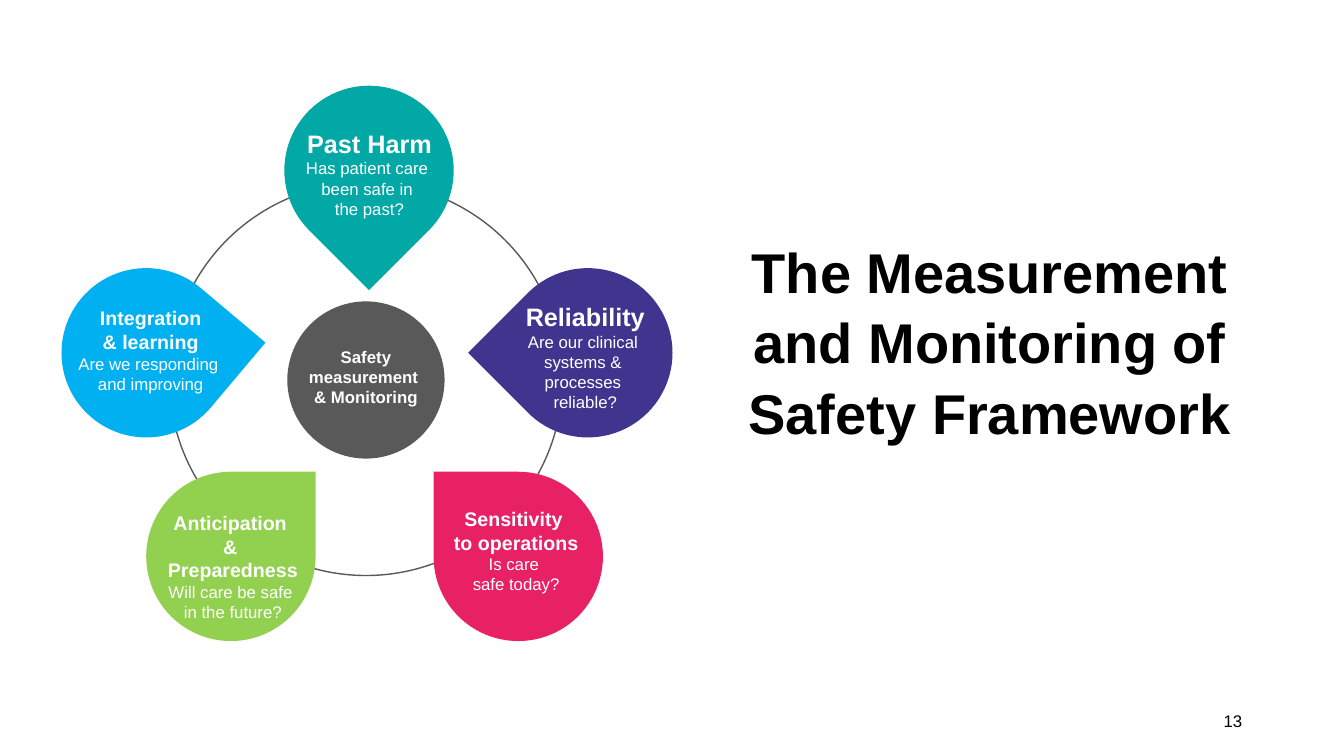
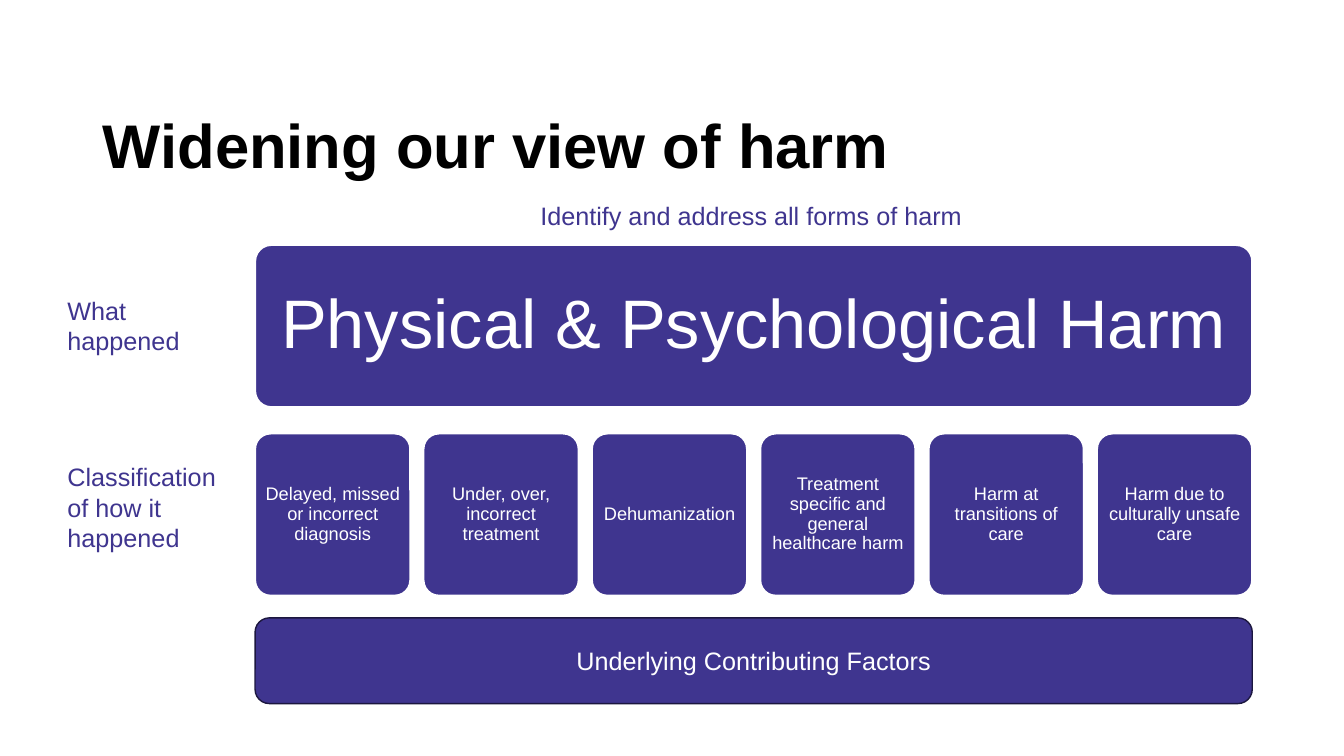
"""Build two slides on measuring safety and widening the view of harm."""
from pptx import Presentation
from pptx.dml.color import RGBColor as Rgb
from pptx.enum.shapes import MSO_SHAPE as Kind
from pptx.enum.text import MSO_ANCHOR as Anchor, MSO_AUTO_SIZE as Fit, PP_ALIGN as Align
from pptx.util import Pt

PX = 9144
BLACK = Rgb(0x00, 0x00, 0x00)
WHITE = Rgb(0xFF, 0xFF, 0xFF)
GRAY = Rgb(0x59, 0x59, 0x59)
TEAL = Rgb(0x02, 0xA8, 0xA5)
PURPLE = Rgb(0x3F, 0x35, 0x8F)
NAVY = Rgb(0x1C, 0x17, 0x3F)
PINK = Rgb(0xE8, 0x20, 0x64)
GREEN = Rgb(0x92, 0xD0, 0x50)
BLUE = Rgb(0x00, 0xB0, 0xF0)


def write(item, lines, color, align=Align.CENTER, space=None, inset=(10, 5), **form):
    """Fill a shape with (text, size, bold) lines."""
    frame = item.text_frame
    wide, high = inset
    form = {"word_wrap": True, "auto_size": Fit.NONE, "vertical_anchor": Anchor.TOP,
            "margin_left": wide * PX, "margin_right": wide * PX,
            "margin_top": high * PX, "margin_bottom": high * PX} | form
    for key, value in form.items():
        setattr(frame, key, value)
    for num, (text, size, bold) in enumerate(lines):
        para = frame.add_paragraph() if num else frame.paragraphs[0]
        para.alignment = align
        para.line_spacing = space
        run = para.add_run()
        run.text = text
        for key, value in {"name": "Arial", "size": Pt(size), "bold": bold}.items():
            setattr(run.font, key, value)
        run.font.color.rgb = color


def draw(slide, kind, box, fill=None, edge=None, width=1, adjust=None, turn=0):
    """Add a flat preset shape."""
    shape = slide.shapes.add_shape(kind, *[n * PX for n in box])
    shape.shadow.inherit = False
    shape.rotation = turn
    for part, color in ((shape.fill, fill), (shape.line.fill, edge)):
        if color is None:
            part.background()
        else:
            part.solid()
            part.fore_color.rgb = color
    if edge is not None:
        shape.line.width = Pt(width)
    if adjust is not None:
        shape.adjustments[0] = adjust
    return shape


deck = Presentation()
deck.slide_width, deck.slide_height = 1333 * PX, 750 * PX
heads = (
    ("The Measurement and Monitoring of Safety Framework", 40, (721, 227, 521, 212),
     {"space": 1.05}),
    ("Widening our view of harm", 44, (92, 40, 1150, 145),
     {"space": 0.9, "align": Align.LEFT, "vertical_anchor": Anchor.BOTTOM}),
)
slides = []
for text, size, box, form in heads:
    slide = deck.slides.add_slide(deck.slide_layouts[5])
    title = slide.shapes.title
    for key, value in zip(("left", "top", "width", "height"), box):
        setattr(title, key, value * PX)
    write(title, [(text, size, True)], BLACK, **form)
    slides.append(slide)
wheel, harm = slides

draw(wheel, Kind.OVAL, (168, 181, 390, 390), edge=GRAY)
petals = (
    ((282, 85), 135, TEAL, (293, 122, 147, 101), 18,
     ["Past Harm"], ["Has patient care ", "been safe in ", "the past?"]),
    ((499, 266), 225, PURPLE, (511, 294, 139, 121), 18,
     ["Reliability"], ["Are our clinical ", "systems & ", "processes ", "reliable?"]),
    ((430, 468), 270, PINK, (440, 498, 144, 98), 14,
     ["Sensitivity ", "to operations"], ["Is care ", "safe today?"]),
    ((145, 468), 0, GREEN, (154, 502, 154, 98), 14,
     ["Anticipation ", "& ", "Preparedness"], ["Will care be safe ", "in the future?"]),
    ((61, 266), 40.1, BLUE, (67, 299, 165, 98), 14,
     ["Integration", "& learning"], ["Are we responding ", "and improving"]),
)
for spot, turn, color, box, size, names, asks in petals:
    draw(wheel, Kind.TEAR, (*spot, 168, 168), color, turn=turn)
    label = wheel.shapes.add_textbox(*[n * PX for n in box])
    lines = [(name, size, True) for name in names] + [(ask, 12, False) for ask in asks]
    write(label, lines, WHITE, word_wrap=False, auto_size=Fit.SHAPE_TO_FIT_TEXT)

draw(wheel, Kind.OVAL, (285, 299, 156, 156), GRAY)
core = wheel.shapes.add_textbox(*[n * PX for n in (296, 339, 134, 71)])
lines = [(text, 12, True) for text in ("Safety", "measurement ", "& Monitoring")]
write(core, lines, WHITE, word_wrap=False, auto_size=Fit.SHAPE_TO_FIT_TEXT)
page = wheel.shapes.add_textbox(*[n * PX for n in (942, 695, 300, 40)])
write(page, [("13", 12, False)], BLACK, Align.RIGHT, vertical_anchor=Anchor.MIDDLE)

base = draw(harm, Kind.ROUNDED_RECTANGLE, (253, 613, 989, 85), PURPLE, NAVY)
write(base, [("Underlying Contributing Factors", 18, False)], WHITE,
      vertical_anchor=Anchor.MIDDLE)
types = ("Delayed, missed or incorrect diagnosis", "Under, over, incorrect treatment",
         "Dehumanization", "Treatment specific and general healthcare harm",
         "Harm at transitions of care", "Harm due to culturally unsafe care")
cards = [("Physical & Psychological Harm", 49, (253, 243, 989, 161))]
cards += [(text, 13, (253 + 167 * col, 430, 154, 161)) for col, text in enumerate(types)]
for text, size, box in cards:
    card = draw(harm, Kind.ROUNDED_RECTANGLE, box, PURPLE, WHITE, 1.5, 0.1)
    write(card, [(text, size, False)], WHITE, space=0.9, inset=(5, 5),
          vertical_anchor=Anchor.MIDDLE)

notes = (
    ("What happened", (57, 288, 138, 71), Align.LEFT),
    ("Classification of how it happened", (57, 453, 171, 101), Align.LEFT),
    ("Identify and address all forms of harm", (236, 194, 1018, 40), Align.CENTER),
)
for text, box, align in notes:
    note = harm.shapes.add_textbox(*[n * PX for n in box])
    write(note, [(text, 18, False)], PURPLE, align)

deck.save("out.pptx")
